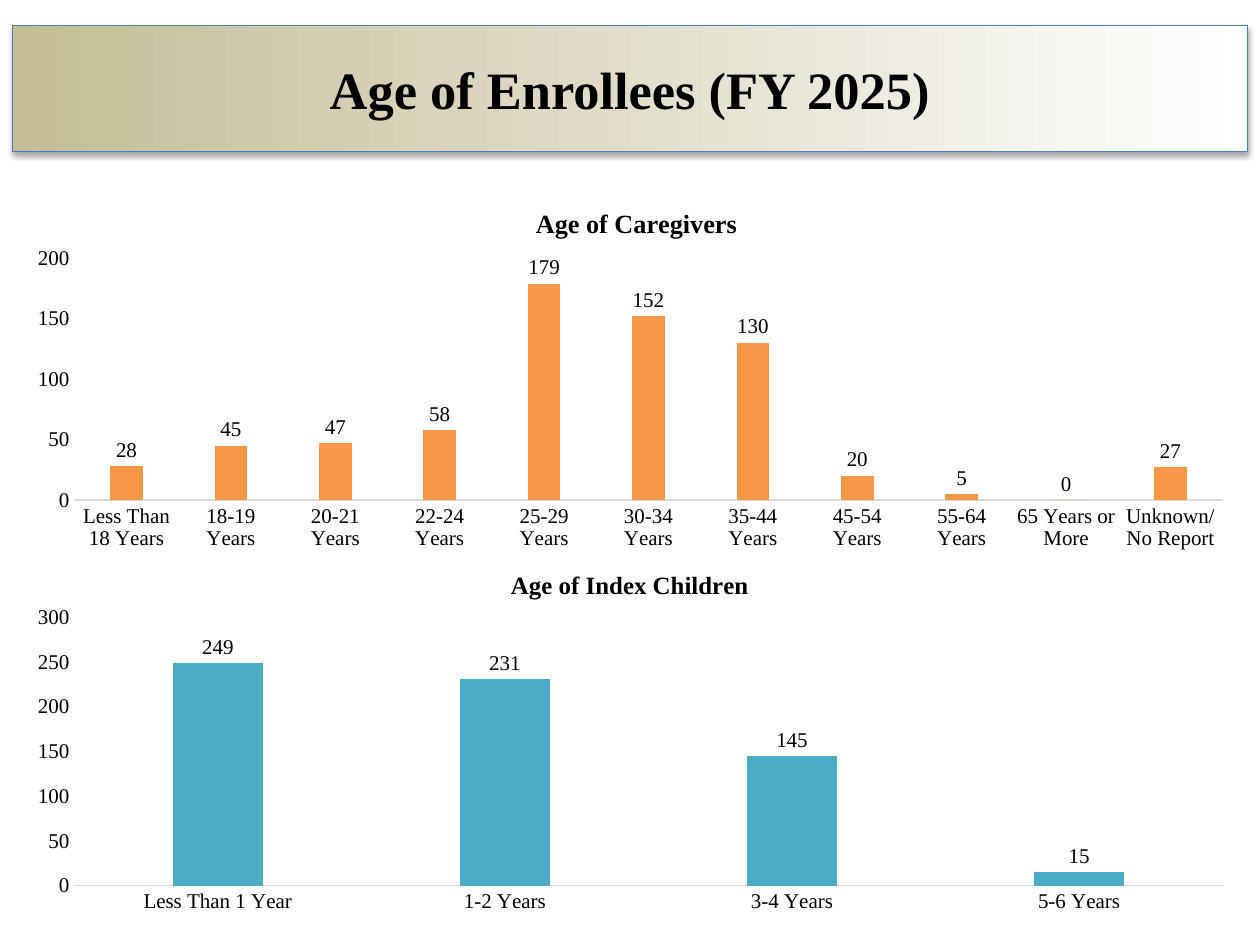
from lxml.etree import SubElement
from pptx import Presentation
from pptx.chart.data import CategoryChartData
from pptx.dml.color import RGBColor
from pptx.enum.chart import XL_CHART_TYPE, XL_LABEL_POSITION, XL_TICK_MARK
from pptx.enum.text import MSO_ANCHOR, PP_ALIGN
from pptx.oxml import parse_xml
from pptx.oxml.ns import nsdecls, qn
from pptx.util import Pt

FONT = "Times New Roman"
COLORS = {
    "text": "000000", "tan": "C4BD97", "white": "FFFFFF", "border": "4B7EBC",
    "axis": "D9D9D9", "orange": "F79646", "teal": "4BACC6",
}
TITLE = "Age of Enrollees (FY 2025)"
LEFT, WIDTH = 7.2, 705.6
TITLE_TOP, TITLE_HEIGHT = 14.4, 72
CHART_HEIGHT = 216

# Layouts are fractions of the chart: x, y for titles; x, y, w, h for plots.
CHARTS = [
    {
        "title": "Age of Caregivers", "title_size": 15, "top": 102.24,
        "color": "orange", "maximum": 200,
        "title_layout": (0.42, 0.06), "plot_layout": (0.05, 0.21, 0.93, 0.64),
        "data": [
            ("Less Than 18 Years", 28), ("18-19 Years", 45), ("20-21 Years", 47),
            ("22-24 Years", 58), ("25-29 Years", 179), ("30-34 Years", 152),
            ("35-44 Years", 130), ("45-54 Years", 20), ("55-64 Years", 5),
            ("65 Years or More", 0), ("Unknown/No Report", 27),
        ],
    },
    {
        "title": "Age of Index Children", "title_size": 14.2, "top": 309.6,
        "color": "teal", "maximum": 300,
        "title_layout": (0.4, 0.06), "plot_layout": (0.05, 0.2, 0.93, 0.71),
        "data": [("Less Than 1 Year", 249), ("1-2 Years", 231),
                 ("3-4 Years", 145), ("5-6 Years", 15)],
    },
]


def rgb(name):
    return RGBColor.from_string(COLORS[name])


def style_font(font, size, bold=False):
    font.name = FONT
    font.size = Pt(size)
    font.bold = bold
    font.color.rgb = rgb("text")


def set_layout(element, index, fractions):
    """Give a chart title or plot area a fixed place, as its child at index."""
    for old in element.findall(qn("c:layout")):
        element.remove(old)
    layout = parse_xml(f"<c:layout {nsdecls('c')}/>")
    manual = SubElement(layout, qn("c:manualLayout"))
    settings = [("xMode", "edge"), ("yMode", "edge"), *zip("xywh", fractions)]
    if len(fractions) == 4:
        settings.insert(0, ("layoutTarget", "inner"))
    for name, value in settings:
        SubElement(manual, qn(f"c:{name}")).set("val", str(value))
    element.insert(index, layout)


def format_title(title):
    title.left, title.top = Pt(LEFT), Pt(TITLE_TOP)
    title.width, title.height = Pt(WIDTH), Pt(TITLE_HEIGHT)
    title.fill.gradient()
    title.fill.gradient_angle = 0
    for stop, name, position in zip(title.fill.gradient_stops, ("tan", "white"), (0, 1)):
        stop.color.rgb = rgb(name)
        stop.position = position
    title.line.color.rgb = rgb("border")
    title.line.width = Pt(0.75)
    title._element.spPr.append(parse_xml(
        f'<a:effectLst {nsdecls("a")}>'
        f'<a:outerShdw blurRad="{Pt(3.1)}" dist="{Pt(1.8)}" dir="5400000" rotWithShape="0">'
        '<a:srgbClr val="000000"><a:alpha val="35000"/></a:srgbClr>'
        '</a:outerShdw></a:effectLst>'))
    frame = title.text_frame
    frame.text = TITLE
    frame.vertical_anchor = MSO_ANCHOR.MIDDLE
    paragraph = frame.paragraphs[0]
    paragraph.alignment = PP_ALIGN.CENTER
    style_font(paragraph.font, 30, bold=True)


def add_age_chart(page, item):
    data = CategoryChartData()
    data.categories = [label for label, _ in item["data"]]
    data.add_series("Series 1", [count for _, count in item["data"]])
    chart = page.shapes.add_chart(
        XL_CHART_TYPE.COLUMN_CLUSTERED, Pt(LEFT), Pt(item["top"]),
        Pt(WIDTH), Pt(CHART_HEIGHT), data).chart
    style_font(chart.font, 12)
    chart.has_legend = False

    heading = chart.chart_title
    heading.text_frame.text = item["title"]
    style_font(heading.text_frame.paragraphs[0].font, item["title_size"], bold=True)
    heading.include_in_layout = False
    set_layout(heading._element, 1, item["title_layout"])

    plot = chart.plots[0]
    set_layout(chart._chartSpace.chart.plotArea, 0, item["plot_layout"])
    plot.gap_width, plot.overlap = 219, -27
    plot.vary_by_categories = False
    fill = plot.series[0].format.fill
    fill.solid()
    fill.fore_color.rgb = rgb(item["color"])
    plot.has_data_labels = True
    labels = plot.data_labels
    labels.show_value = True
    labels.position = XL_LABEL_POSITION.OUTSIDE_END
    style_font(labels.font, 12)

    for axis in (chart.category_axis, chart.value_axis):
        axis.major_tick_mark = axis.minor_tick_mark = XL_TICK_MARK.NONE
        axis.has_major_gridlines = False
        style_font(axis.tick_labels.font, 12)
    chart.category_axis.format.line.color.rgb = rgb("axis")
    chart.category_axis.format.line.width = Pt(0.75)
    values = chart.value_axis
    values.format.line.fill.background()
    values.minimum_scale, values.maximum_scale = 0, item["maximum"]
    values.major_unit = 50


def main():
    deck = Presentation()
    deck.slide_width, deck.slide_height = Pt(720), Pt(540)
    page = deck.slides.add_slide(deck.slide_layouts[5])
    format_title(page.shapes.title)
    for item in CHARTS:
        add_age_chart(page, item)
    deck.save("out.pptx")


if __name__ == "__main__":
    main()
